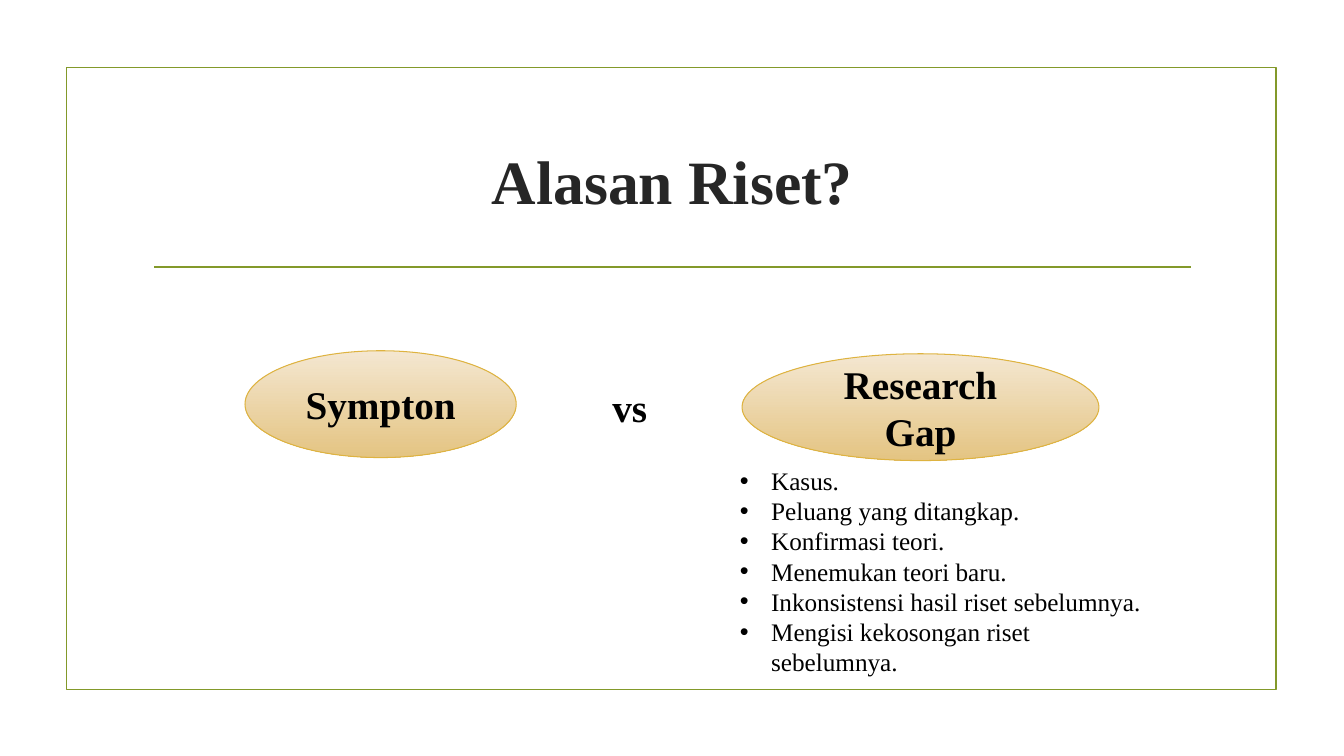
from pptx import Presentation
from pptx.dml.color import RGBColor
from pptx.enum.shapes import MSO_CONNECTOR, MSO_SHAPE
from pptx.enum.text import MSO_ANCHOR, PP_ALIGN
from pptx.oxml.ns import qn
from pptx.util import Inches, Pt
from lxml.etree import SubElement

OLIVE = RGBColor(0x83, 0x99, 0x2A)
CHARCOAL = RGBColor(0x26, 0x26, 0x26)
BLACK = RGBColor(0, 0, 0)
GOLD = RGBColor(0xDE, 0xB3, 0x40)
CREAM = RGBColor(0xF4, 0xE7, 0xD1)
SAND = RGBColor(0xE4, 0xC4, 0x82)

TITLE_FORMAT = {"name": "Times New Roman", "size": Pt(44), "bold": True}
LABEL_FORMAT = {"name": "Times New Roman", "size": Pt(28), "bold": True}
LIST_FORMAT = {"name": "Times New Roman", "size": Pt(18), "bold": False}

REASONS = [
    "Kasus.",
    "Peluang yang ditangkap.",
    "Konfirmasi teori.",
    "Menemukan teori baru.",
    "Inkonsistensi hasil riset sebelumnya.",
    "Mengisi kekosongan riset sebelumnya.",
]


def write_paragraph(paragraph, text, text_format, color, alignment):
    paragraph.text = text
    paragraph.alignment = alignment
    for name, value in text_format.items():
        setattr(paragraph.font, name, value)
    paragraph.font.color.rgb = color


def prepare_frame(shape):
    frame = shape.text_frame
    frame.word_wrap = True
    frame.vertical_anchor = MSO_ANCHOR.MIDDLE
    return frame


def add_border(slide, left, top, width, height):
    border = slide.shapes.add_shape(
        MSO_SHAPE.RECTANGLE, Inches(left), Inches(top), Inches(width), Inches(height))
    border.shadow.inherit = False
    border.fill.background()
    border.line.color.rgb = OLIVE
    border.line.width = Pt(1.25)


def add_header(slide, left, top, width, height):
    title = slide.shapes.add_textbox(
        Inches(left), Inches(top), Inches(width), Inches(height))
    write_paragraph(prepare_frame(title).paragraphs[0], "Alasan Riset?",
                    TITLE_FORMAT, CHARCOAL, PP_ALIGN.CENTER)
    inset = 0.11
    rule_top = Inches(top + height + 0.15)
    rule = slide.shapes.add_connector(
        MSO_CONNECTOR.STRAIGHT, Inches(left + inset), rule_top,
        Inches(left + width - inset), rule_top)
    rule.line.color.rgb = OLIVE
    rule.line.width = Pt(1.25)
    SubElement(rule._element.spPr, qn("a:effectLst"))


def add_oval(slide, text, left, top, width, height, filled=True):
    oval = slide.shapes.add_shape(
        MSO_SHAPE.OVAL, Inches(left), Inches(top), Inches(width), Inches(height))
    oval.shadow.inherit = False
    if filled:
        oval.fill.gradient()
        oval.fill.gradient_angle = 270
        for stop, color in zip(oval.fill.gradient_stops, (CREAM, SAND)):
            stop.color.rgb = color
        oval.line.color.rgb = GOLD
        oval.line.width = Pt(0.75)
    else:
        oval.fill.background()
        oval.line.fill.background()
    write_paragraph(prepare_frame(oval).paragraphs[0], text,
                    LABEL_FORMAT, BLACK, PP_ALIGN.CENTER)


def add_comparison(slide, left, top):
    add_oval(slide, "Sympton", left, top, 2.69, 1.06)
    add_oval(slide, "vs", left + 2.47, top + 0.03, 2.69, 1.06, filled=False)
    add_oval(slide, "Research Gap", left + 4.93, top + 0.03, 3.54, 1.06)


def add_reasons(slide, left, top, width, height):
    box = slide.shapes.add_textbox(
        Inches(left), Inches(top), Inches(width), Inches(height))
    frame = prepare_frame(box)
    for index, reason in enumerate(REASONS):
        paragraph = frame.add_paragraph() if index else frame.paragraphs[0]
        properties = paragraph._p.get_or_add_pPr()
        properties.set("marL", str(Inches(0.31)))
        properties.set("indent", str(-Inches(0.31)))
        SubElement(properties, qn("a:buFont"), typeface="Arial")
        SubElement(properties, qn("a:buChar"), char="•")
        write_paragraph(paragraph, reason, LIST_FORMAT, BLACK, PP_ALIGN.LEFT)


def main():
    presentation = Presentation()
    presentation.slide_width = Inches(13.33)
    presentation.slide_height = Inches(7.5)
    slide = presentation.slides.add_slide(presentation.slide_layouts[6])
    add_border(slide, 0.66, 0.67, 12, 6.17)
    add_header(slide, 1.42, 1.07, 10.5, 1.43)
    add_comparison(slide, 2.43, 3.48)
    add_reasons(slide, 7.24, 4.76, 4.24, 1.81)
    presentation.save("out.pptx")


if __name__ == "__main__":
    main()
